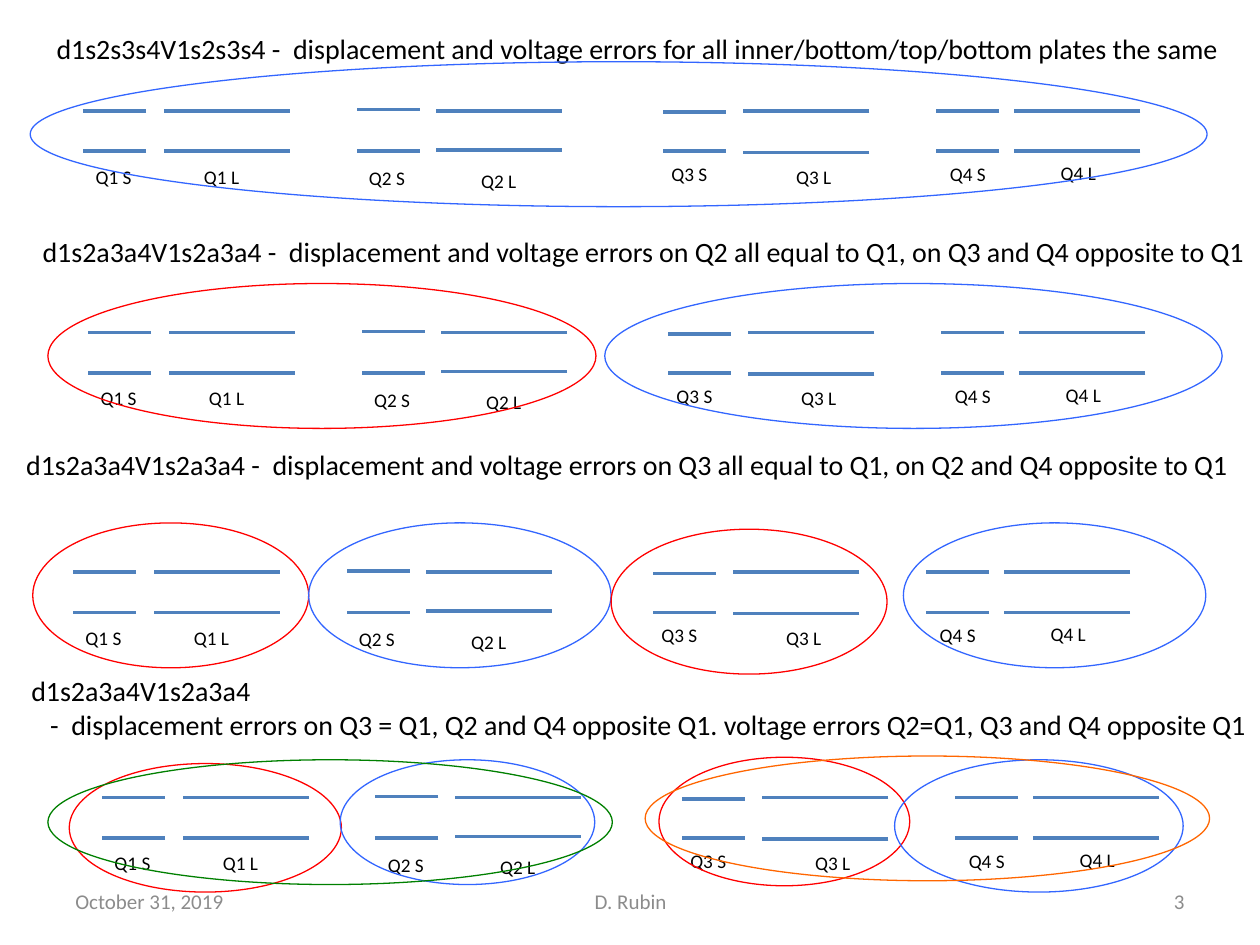
from lxml.etree import SubElement
from pptx import Presentation
from pptx.dml.color import RGBColor
from pptx.enum.shapes import MSO_CONNECTOR, MSO_SHAPE
from pptx.enum.text import MSO_ANCHOR, PP_ALIGN
from pptx.oxml.ns import qn
from pptx.util import Inches, Pt

BLACK, GREY, PLATE = "000000", "8C8C8C", "4F81BD"
RED, BLUE, GREEN, ORANGE = "FF0000", "3366FF", "008000", "FF6600"

# Label, plate left, plate length, top plate, bottom plate, label left, label top;
# lengths are measured from the start of the first top plate.
PLATE_PAIRS = [
    ("Q1 S", 0, 0.5, 0, 0.32, 0, 0.38),
    ("Q1 L", 0.64, 1, 0, 0.32, 0.86, 0.38),
    ("Q2 S", 2.17, 0.5, -0.01, 0.32, 2.17, 0.39),
    ("Q2 L", 2.8, 1, 0, 0.31, 3.06, 0.41),
    ("Q3 S", 4.6, 0.5, 0.01, 0.32, 4.57, 0.36),
    ("Q3 L", 5.24, 1, 0, 0.33, 5.56, 0.38),
    ("Q4 S", 6.77, 0.5, 0, 0.32, 6.78, 0.36),
    ("Q4 L", 7.39, 1, 0, 0.32, 7.66, 0.35),
]

# Heading lines, heading box, start of the plates, ellipses as (colour, box)
CASES = [
    (["d1s2s3s4V1s2s3s4 -  displacement and voltage errors for all "
      "inner/bottom/top/bottom plates the same"],
     (0.35, 0.2, 9.59, 0.37), (0.66, 0.88),
     [(BLUE, (0.24, 0.49, 9.34, 1.15))]),
    (["d1s2a3a4V1s2a3a4 -  displacement and voltage errors on Q2 all equal to Q1, "
      "on Q3 and Q4 opposite to Q1"],
     (0.24, 1.81, 10.04, 0.37), (0.7, 2.64),
     [(RED, (0.38, 2.25, 4.35, 1.15)), (BLUE, (4.8, 2.25, 4.9, 1.15))]),
    (["d1s2a3a4V1s2a3a4 -  displacement and voltage errors on Q3 all equal to Q1, "
      "on Q2 and Q4 opposite to Q1"],
     (0.11, 3.5, 10, 0.37), (0.58, 4.54),
     [(RED, (0.26, 4.15, 2.19, 1.15)), (BLUE, (2.45, 4.15, 2.4, 1.15)),
      (RED, (4.85, 4.2, 2.19, 1.15)), (BLUE, (7.17, 4.15, 2.4, 1.15))]),
    (["d1s2a3a4V1s2a3a4",
      "-  displacement errors on Q3 = Q1, Q2 and Q4 opposite Q1. "
      "voltage errors Q2=Q1, Q3 and Q4 opposite Q1"],
     (0.15, 5.3, 10, 0.64), (0.81, 6.33),
     [(RED, (0.55, 6.06, 2.16, 1.02)), (BLUE, (2.7, 6.03, 2.02, 0.99)),
      (RED, (5.23, 6.01, 1.99, 1.02)), (BLUE, (7.1, 6.03, 2.29, 1.05)),
      (GREEN, (0.38, 6.03, 4.48, 0.99)), (ORANGE, (5.12, 6, 4.48, 0.99))]),
]

FOOTERS = [
    ("October 31, 2019", 0.5, 2.33, PP_ALIGN.LEFT),
    ("D. Rubin", 3.42, 3.17, PP_ALIGN.CENTER),
    ("3", 7.17, 2.33, PP_ALIGN.RIGHT),
]


def rgb(colour):
    return RGBColor.from_string(colour)


def add_text(page, lines, place, size, colour=BLACK, wrap=False):
    box = page.shapes.add_textbox(*map(Inches, place))
    frame = box.text_frame
    frame.word_wrap = wrap
    frame.text = "\n".join(lines)
    for paragraph in frame.paragraphs:
        for span in paragraph.runs:
            span.font.name = "Calibri"
            span.font.size = Pt(size)
            span.font.color.rgb = rgb(colour)
    return frame


def add_heading(page, lines, place):
    """Write a heading whose second line, if any, is indented."""
    frame = add_text(page, lines, place, 16)
    for paragraph in frame.paragraphs[1:]:
        properties = paragraph._p.get_or_add_pPr()
        properties.set("marL", str(Inches(0.15)))
        properties.set("indent", "0")


def add_plate(page, left, top, length):
    plate = page.shapes.add_connector(
        MSO_CONNECTOR.STRAIGHT,
        Inches(left + length), Inches(top), Inches(left), Inches(top))
    plate.line.color.rgb = rgb(PLATE)
    plate.line.width = Pt(2)
    SubElement(plate._element.spPr, qn("a:effectLst"))


def add_plate_row(page, left, top):
    for label, x, length, upper, lower, label_x, label_y in PLATE_PAIRS:
        for y in (upper, lower):
            add_plate(page, left + x, top + y, length)
        add_text(page, [label], (left + label_x, top + label_y, 0.49, 0.29), 11)


def add_ellipse(page, colour, place):
    ellipse = page.shapes.add_shape(MSO_SHAPE.OVAL, *map(Inches, place))
    ellipse.shadow.inherit = False
    ellipse.fill.background()
    ellipse.line.color.rgb = rgb(colour)
    ellipse.line.width = Pt(0.75)


def add_footer(page, text, left, width, alignment):
    frame = add_text(page, [text], (left, 6.95, width, 0.4), 12, GREY, wrap=True)
    frame.vertical_anchor = MSO_ANCHOR.MIDDLE
    frame.paragraphs[0].alignment = alignment


def main():
    deck = Presentation()
    deck.slide_width, deck.slide_height = Inches(10), Inches(7.5)
    page = deck.slides.add_slide(deck.slide_layouts[6])
    for lines, place, start, ellipses in CASES:
        add_heading(page, lines, place)
        add_plate_row(page, *start)
        for colour, outline in ellipses:
            add_ellipse(page, colour, outline)
    for footer in FOOTERS:
        add_footer(page, *footer)
    deck.save("out.pptx")


if __name__ == "__main__":
    main()
